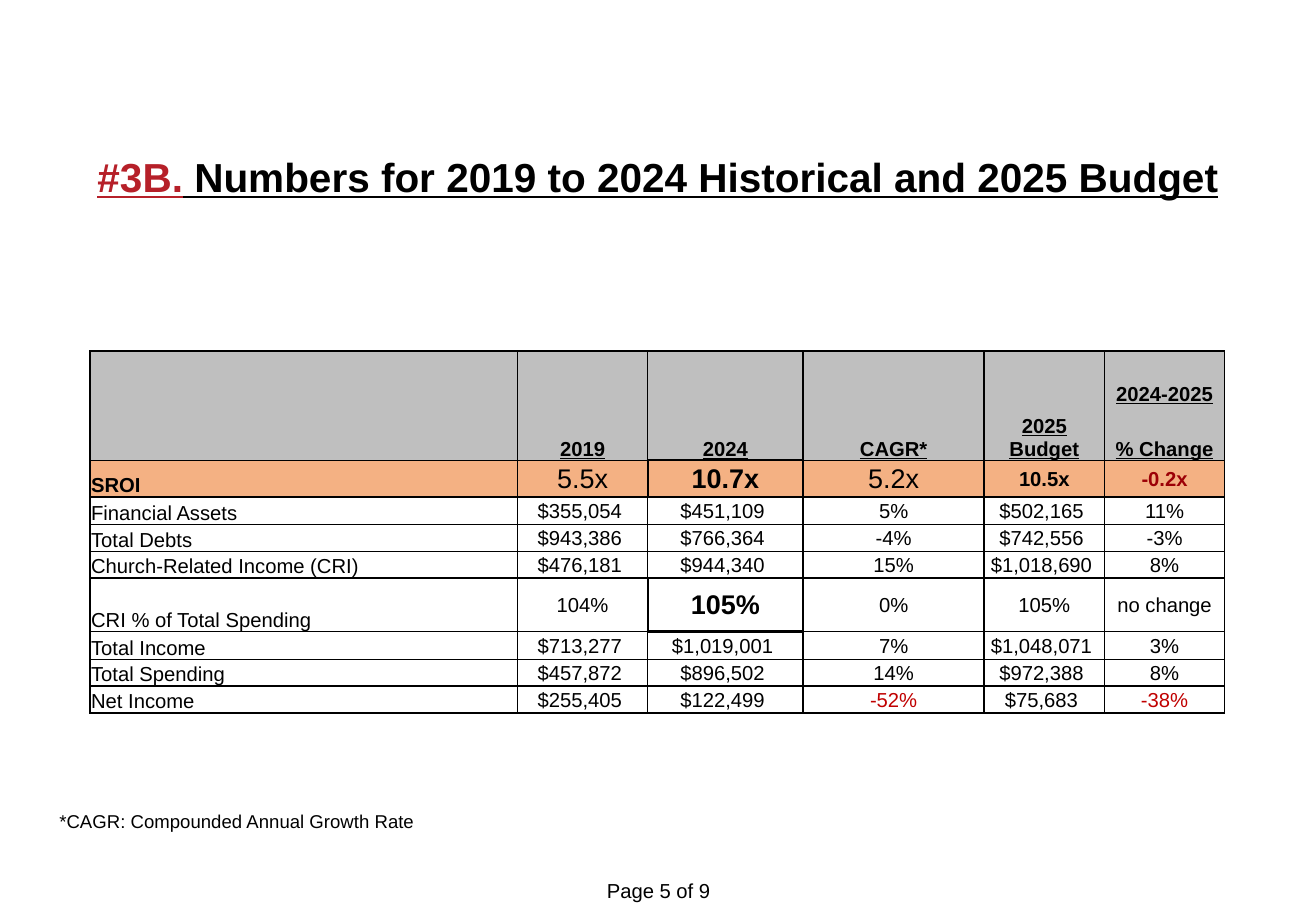
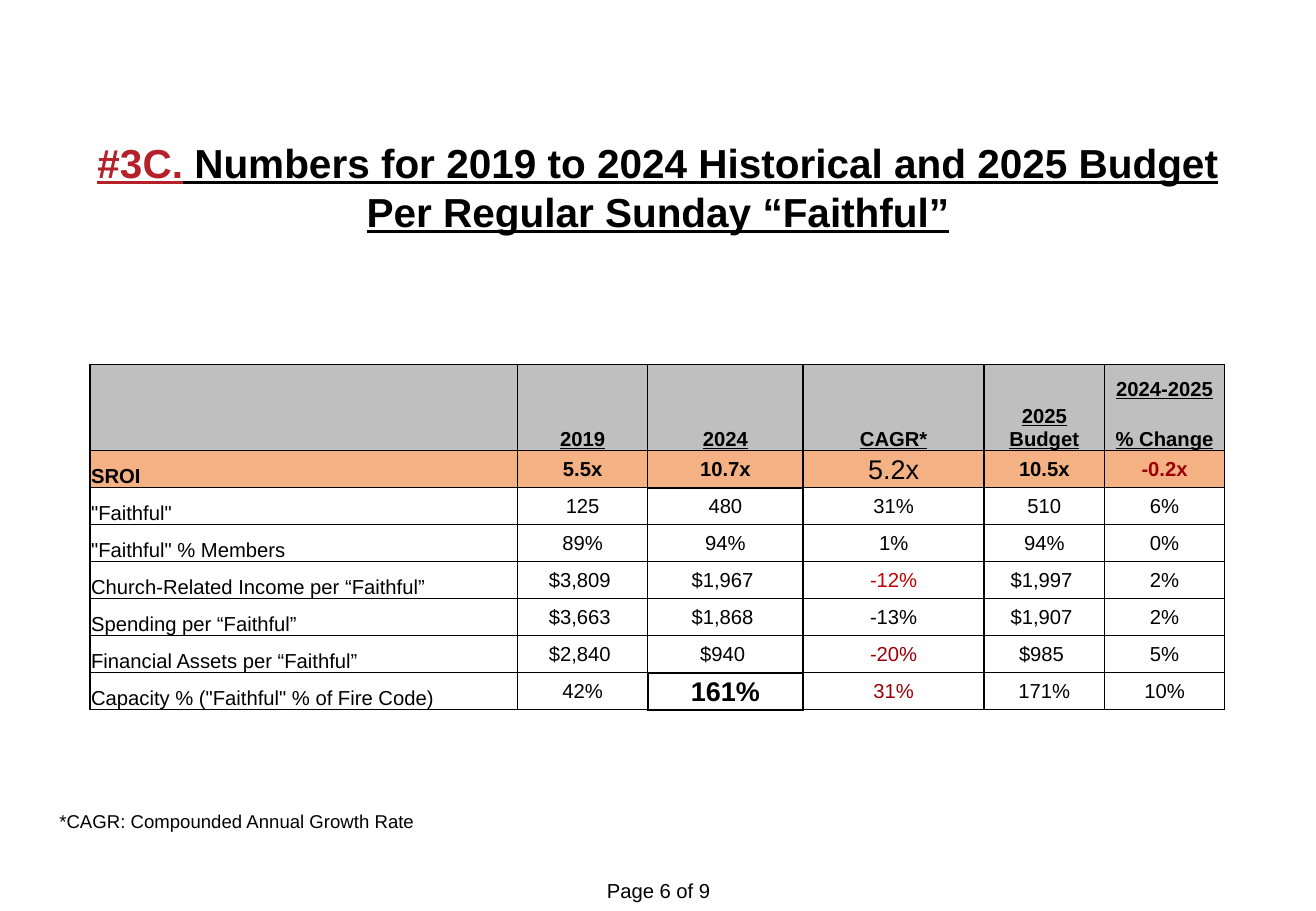
from lxml.etree import SubElement
from pptx import Presentation
from pptx.dml.color import RGBColor
from pptx.enum.text import MSO_ANCHOR as Anchor, MSO_AUTO_SIZE as AutoSize, PP_ALIGN as Align
from pptx.oxml.ns import qn
from pptx.util import Inches, Pt

BLACK = RGBColor(0x00, 0x00, 0x00)
TITLE_RED = RGBColor(0xB6, 0x20, 0x29)
LOSS_RED = RGBColor(0xC0, 0x00, 0x00)
DARK_RED = RGBColor(0x9C, 0x00, 0x06)
HEADER_GREY = RGBColor(0xBF, 0xBF, 0xBF)
SROI_ORANGE = RGBColor(0xF4, 0xB1, 0x83)
FONT = "Arial"

# Content shared by both slides
HEADING = " Numbers for 2019 to 2024 Historical and 2025 Budget"
FOOTNOTE = "*CAGR: Compounded Annual Growth Rate"
PAGE_COUNT = 9
HEADER_ROWS = [
    ("", "2019", "2024", "CAGR*", "2025 Budget", "2024-2025"),
    ("", "", "", "", "", "% Change"),
]
SROI_ROW = ("SROI", "5.5x", "10.7x", "5.2x", "10.5x", "-0.2x")
SROI_INDEX = len(HEADER_ROWS)
COLUMN_WIDTHS = (3.52, 1.07, 1.28, 1.49, 0.99, 0.99)

# Content of each slide; cell keys are (row, column) in the whole table
SLIDES = [
    {
        "number": "#3B.", "subtitle": None, "page": 5,
        "title_spacing": 37.6, "top": 2.89,
        "row_heights": (0.45, 0.45, 0.3, 0.23, 0.22, 0.22, 0.44, 0.23, 0.22, 0.22),
        "rows": [
            ("Financial Assets", "$355,054 ", "$451,109 ", "5%", "$502,165 ", "11%"),
            ("Total Debts", "$943,386 ", "$766,364 ", "-4%", "$742,556 ", "-3%"),
            ("Church-Related Income (CRI)", "$476,181 ", "$944,340 ", "15%", "$1,018,690 ", "8%"),
            ("CRI % of Total Spending", "104%", "105%", "0%", "105%", "no change"),
            ("Total Income", "$713,277 ", "$1,019,001 ", "7%", "$1,048,071 ", "3%"),
            ("Total Spending", "$457,872 ", "$896,502 ", "14%", "$972,388 ", "8%"),
            ("Net Income", "$255,405 ", "$122,499 ", "-52%", "$75,683 ", "-38%"),
        ],
        "large": {(2, 1), (2, 2), (2, 3), (6, 2)},
        "strong": {(2, 2), (6, 2)},
        "thick_sides": {(2, 2): "LTRB", (6, 2): "LTRB"},
        "colours": {(2, 5): DARK_RED, (9, 3): LOSS_RED, (9, 5): LOSS_RED},
    },
    {
        "number": "#3C.", "subtitle": "Per Regular Sunday “Faithful”", "page": 6,
        "title_spacing": 29, "top": 3,
        "row_heights": (0.3,) * 2 + (0.305,) * 7,
        "rows": [
            ('"Faithful"', "125", "480", "31%", "510", "6%"),
            ('"Faithful" % Members', "89%", "94%", "1%", "94%", "0%"),
            ("Church-Related Income per “Faithful”", "$3,809 ", "$1,967 ", "-12%", "$1,997 ", "2%"),
            ("Spending per “Faithful”", "$3,663 ", "$1,868 ", "-13%", "$1,907 ", "2%"),
            ("Financial Assets per “Faithful”", "$2,840 ", "$940 ", "-20%", "$985 ", "5%"),
            ('Capacity % ("Faithful" % of Fire Code)', "42%", "161%", "31%", "171%", "10%"),
        ],
        "large": {(2, 3), (8, 2)},
        "strong": {(8, 2)},
        "thick_sides": {(2, 2): "RB", (8, 2): "LTRB"},
        "colours": {(2, 5): DARK_RED, (5, 3): LOSS_RED, (7, 3): DARK_RED, (8, 3): DARK_RED},
    },
]

# Each side with the step to its neighbour and the neighbour's matching side
SIDES = {"L": (0, -1, "R"), "R": (0, 1, "L"), "T": (-1, 0, "B"), "B": (1, 0, "T")}


def style_font(font, size, colour=BLACK, bold=False, underline=False):
    font.name, font.size = FONT, Pt(size)
    font.bold, font.underline = bold, underline
    font.color.rgb = colour


def add_title(slide, content):
    title = slide.shapes.title
    title.left, title.top = Inches(0.39), Inches(1.13)
    title.width, title.height = Inches(10.05), Inches(1.05)
    frame = title.text_frame
    frame.auto_size, frame.vertical_anchor = AutoSize.NONE, Anchor.TOP
    frame.margin_left = frame.margin_top = frame.margin_right = frame.margin_bottom = 0
    frame.text = content["number"]
    frame.paragraphs[0].add_run().text = HEADING
    if content["subtitle"]:
        frame.add_paragraph().text = content["subtitle"]
    for paragraph in frame.paragraphs:
        paragraph.alignment = Align.CENTER
        paragraph.line_spacing = Pt(content["title_spacing"])
        for run in paragraph.runs:
            colour = TITLE_RED if run.text == content["number"] else BLACK
            style_font(run.font, 24, colour, bold=True, underline=True)


def add_note(slide, text, left, top, width, height, size, alignment):
    note = slide.shapes.add_textbox(Inches(left), Inches(top), Inches(width), Inches(height))
    frame = note.text_frame
    frame.word_wrap, frame.auto_size = True, AutoSize.SHAPE_TO_FIT_TEXT
    frame.text = text
    frame.paragraphs[0].alignment = alignment
    style_font(frame.paragraphs[0].runs[0].font, size)


def draw_borders(cell, row, column, thick_sides):
    properties = cell._tc.get_or_add_tcPr()
    for index, (side, (down, across, opposite)) in enumerate(SIDES.items()):
        neighbour = (row + down, column + across)
        thick = (side in thick_sides.get((row, column), "")
                 or opposite in thick_sides.get(neighbour, ""))
        line = SubElement(properties, qn("a:ln" + side), w=str(Pt(1.5 if thick else 1)))
        properties.insert(index, line)
        if (row, side) in ((0, "B"), (1, "T")):  # the two header rows read as one
            SubElement(line, qn("a:noFill"))
        else:
            fill = SubElement(line, qn("a:solidFill"))
            SubElement(fill, qn("a:srgbClr"), val=str(BLACK))


def fill_cell(cell, text, row, column, content):
    is_header, is_sroi = row < SROI_INDEX, row == SROI_INDEX
    if is_header or is_sroi:
        cell.fill.solid()
        cell.fill.fore_color.rgb = HEADER_GREY if is_header else SROI_ORANGE
    else:
        cell.fill.background()
    draw_borders(cell, row, column, content["thick_sides"])
    if not text:
        return
    cell.margin_left = cell.margin_top = cell.margin_right = Inches(0.01)
    cell.margin_bottom = 0
    cell.vertical_anchor = Anchor.BOTTOM if is_header or column == 0 else Anchor.MIDDLE
    cell.text = text
    paragraph = cell.text_frame.paragraphs[0]
    paragraph.alignment = Align.LEFT if column == 0 else Align.CENTER
    place = (row, column)
    large, strong = place in content["large"], place in content["strong"]
    style_font(paragraph.runs[0].font, 16 if large else 12,
               content["colours"].get(place, BLACK),
               bold=strong or is_header or (is_sroi and not large), underline=is_header)


def add_numbers(slide, content):
    rows = HEADER_ROWS + [SROI_ROW] + content["rows"]
    heights = content["row_heights"]
    table = slide.shapes.add_table(
        len(rows), len(COLUMN_WIDTHS), Inches(0.74), Inches(content["top"]),
        Inches(sum(COLUMN_WIDTHS)), Inches(sum(heights))).table
    table.first_row = table.horz_banding = False
    for column, width in zip(table.columns, COLUMN_WIDTHS):
        column.width = Inches(width)
    for row, height in zip(table.rows, heights):
        row.height = Inches(height)
    # Every heading but the last spans both header rows
    for column in range(len(COLUMN_WIDTHS) - 1):
        table.cell(0, column).merge(table.cell(1, column))
    for row, texts in enumerate(rows):
        for column, text in enumerate(texts):
            fill_cell(table.cell(row, column), text, row, column, content)


def main():
    deck = Presentation()
    deck.slide_width, deck.slide_height = Inches(10.83), Inches(7.5)
    title_only = deck.slide_layouts[5]
    for content in SLIDES:
        slide = deck.slides.add_slide(title_only)
        add_title(slide, content)
        add_note(slide, f"Page {content['page']} of {PAGE_COUNT}",
                 4.67, 7.18, 1.5, 0.3, 12, Align.CENTER)
        add_note(slide, FOOTNOTE, 0.39, 6.62, 4.34, 0.29, 11, Align.LEFT)
        add_numbers(slide, content)
    deck.save("out.pptx")


if __name__ == "__main__":
    main()
